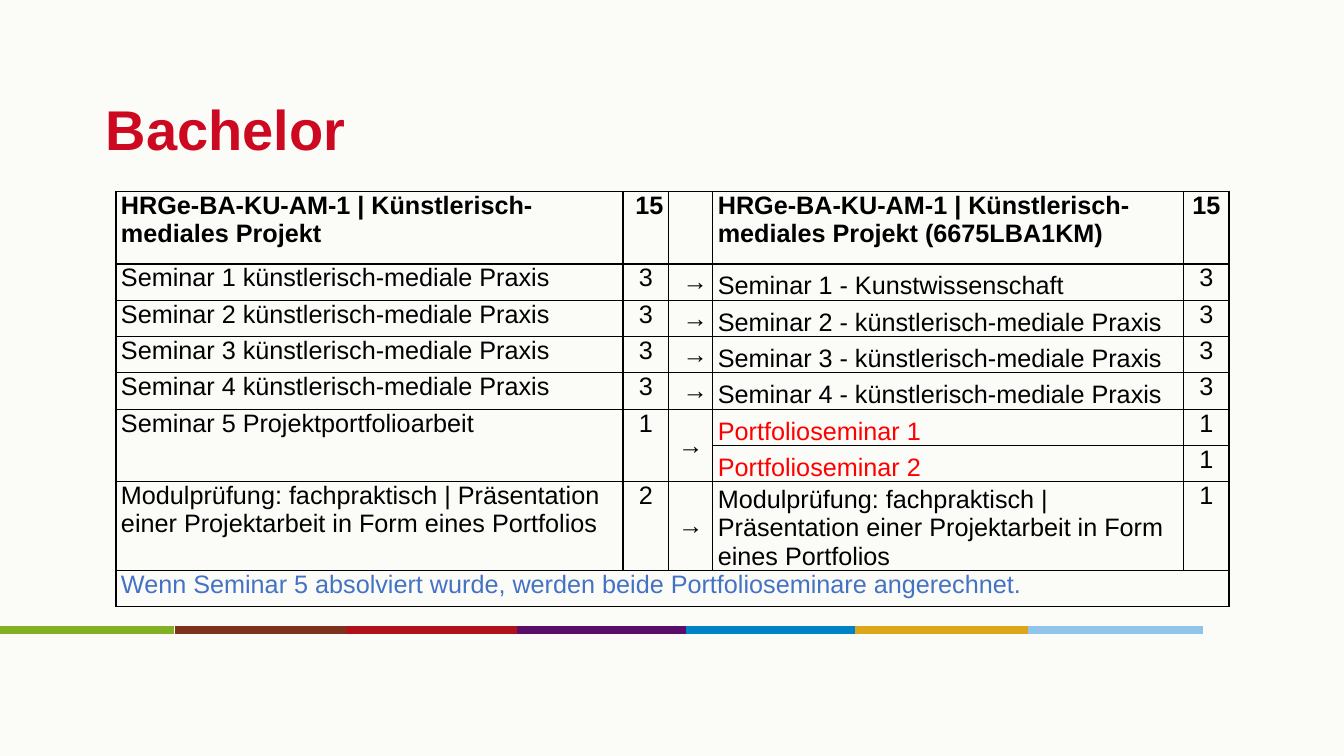
"""Build the slide that maps the old Bachelor module to the new one."""
from lxml import etree
from pptx import Presentation
from pptx.dml.color import RGBColor
from pptx.enum.shapes import MSO_CONNECTOR
from pptx.enum.text import MSO_ANCHOR as Anchor, PP_ALIGN as Align
from pptx.oxml import parse_xml
from pptx.oxml.ns import nsdecls, qn
from pptx.util import Inches, Pt

COLORS = {
    "background": "FBFCF8",
    "title": "CD0921",
    "text": "000000",
    "new": "FF0000",
    "note": "4472C4",
    "green": "83AF23",
    "brown": "7D321D",
    "red": "AF111D",
    "purple": "590F68",
    "blue": "0082C6",
    "gold": "DBA619",
    "sky": "91C4EA",
}
FONT = "Arial"


def add_run(paragraph, text, size, color, bold=False):
    run = paragraph.add_run()
    run.text = text
    run.font.name = FONT
    run.font.size = Pt(size)
    run.font.bold = bold
    run.font.color.rgb = RGBColor.from_string(COLORS[color])


def add_borders(cell):
    properties = cell._tc.get_or_add_tcPr()
    for position, side in enumerate(("lnL", "lnR", "lnT", "lnB")):
        border = parse_xml(
            f'<a:{side} {nsdecls("a")} w="12700"><a:solidFill>'
            f'<a:srgbClr val="{COLORS["text"]}"/></a:solidFill></a:{side}>'
        )
        properties.insert(position, border)


presentation = Presentation()
presentation.slide_width = Inches(13.33)
presentation.slide_height = Inches(7.5)
slide = presentation.slides.add_slide(presentation.slide_layouts[5])
slide.background.fill.solid()
slide.background.fill.fore_color.rgb = RGBColor.from_string(COLORS["background"])

stripes = [
    ("green", 0), ("brown", 1.74), ("red", 3.43), ("purple", 5.13),
    ("blue", 6.8), ("gold", 8.48), ("sky", 10.2),
]
for color, left in stripes:
    stripe = slide.shapes.add_connector(
        MSO_CONNECTOR.STRAIGHT,
        Inches(left), Inches(6.25), Inches(left + 1.73), Inches(6.25),
    )
    stripe.line.color.rgb = RGBColor.from_string(COLORS[color])
    stripe.line.width = Pt(5.5)
    etree.SubElement(stripe._element.spPr, qn("a:effectLst"))

title = slide.shapes.title
title.left, title.top = Inches(1), Inches(0.65)
title.width, title.height = Inches(11.33), Inches(1.25)
title_frame = title.text_frame
title_frame.margin_left = title_frame.margin_right = Inches(0.05)
title_frame.margin_top = title_frame.margin_bottom = Inches(0.05)
title_frame.vertical_anchor = Anchor.MIDDLE
title_frame.paragraphs[0].alignment = Align.LEFT
add_run(title_frame.paragraphs[0], "Bachelor", 40, "title", True)

exam = "Modulprüfung: fachpraktisch | Präsentation einer Projektarbeit in Form eines Portfolios"
rows = [
    ("HRGe-BA-KU-AM-1 | Künstlerisch-mediales Projekt", "15", "",
     "HRGe-BA-KU-AM-1 | Künstlerisch-mediales Projekt (6675LBA1KM)", "15"),
    ("Seminar 1 künstlerisch-mediale Praxis", "3", "→", "Seminar 1 - Kunstwissenschaft", "3"),
    ("Seminar 2 künstlerisch-mediale Praxis", "3", "→", "Seminar 2 - künstlerisch-mediale Praxis", "3"),
    ("Seminar 3 künstlerisch-mediale Praxis", "3", "→", "Seminar 3 - künstlerisch-mediale Praxis", "3"),
    ("Seminar 4 künstlerisch-mediale Praxis", "3", "→", "Seminar 4 - künstlerisch-mediale Praxis", "3"),
    ("Seminar 5 Projektportfolioarbeit", "1", "→", "Portfolioseminar 1", "1"),
    ("", "", "", "Portfolioseminar 2", "1"),
    (exam, "2", "→", exam, "1"),
    ("Wenn Seminar 5 absolviert wurde, werden beide Portfolioseminare angerechnet.", "", "", "", ""),
]
column_widths = [5.03, 0.45, 0.44, 4.67, 0.45]
row_heights = [0.72] + [0.36] * 6 + [0.88, 0.36]
column_alignments = [Align.LEFT, Align.CENTER, Align.RIGHT, Align.LEFT, Align.CENTER]
column_anchors = [Anchor.TOP, Anchor.TOP, Anchor.MIDDLE, Anchor.BOTTOM, Anchor.TOP]
special_alignments = {(0, 1): Align.RIGHT, (5, 2): Align.CENTER, (7, 2): Align.CENTER}
special_colors = {(5, 3): "new", (6, 3): "new", (8, 0): "note"}

table = slide.shapes.add_table(
    len(rows), len(column_widths), Inches(1.15), Inches(1.9),
    Inches(sum(column_widths)), Inches(sum(row_heights)),
).table
table.first_row = False
table.horz_banding = False
for column, width in zip(table.columns, column_widths):
    column.width = Inches(width)
for row, height in zip(table.rows, row_heights):
    row.height = Inches(height)

for row_index, texts in enumerate(rows):
    for column_index, text in enumerate(texts):
        position = (row_index, column_index)
        cell = table.cell(row_index, column_index)
        cell.fill.background()
        add_borders(cell)
        cell.margin_left = cell.margin_right = Inches(0.05)
        cell.margin_top = cell.margin_bottom = 0
        cell.vertical_anchor = Anchor.TOP if row_index == 0 else column_anchors[column_index]
        if text:
            paragraph = cell.text_frame.paragraphs[0]
            paragraph.alignment = special_alignments.get(position, column_alignments[column_index])
            add_run(paragraph, text, 18, special_colors.get(position, "text"), row_index == 0)

for column_index in range(3):
    table.cell(5, column_index).merge(table.cell(6, column_index))
table.cell(8, 0).merge(table.cell(8, 4))

presentation.save("out.pptx")
